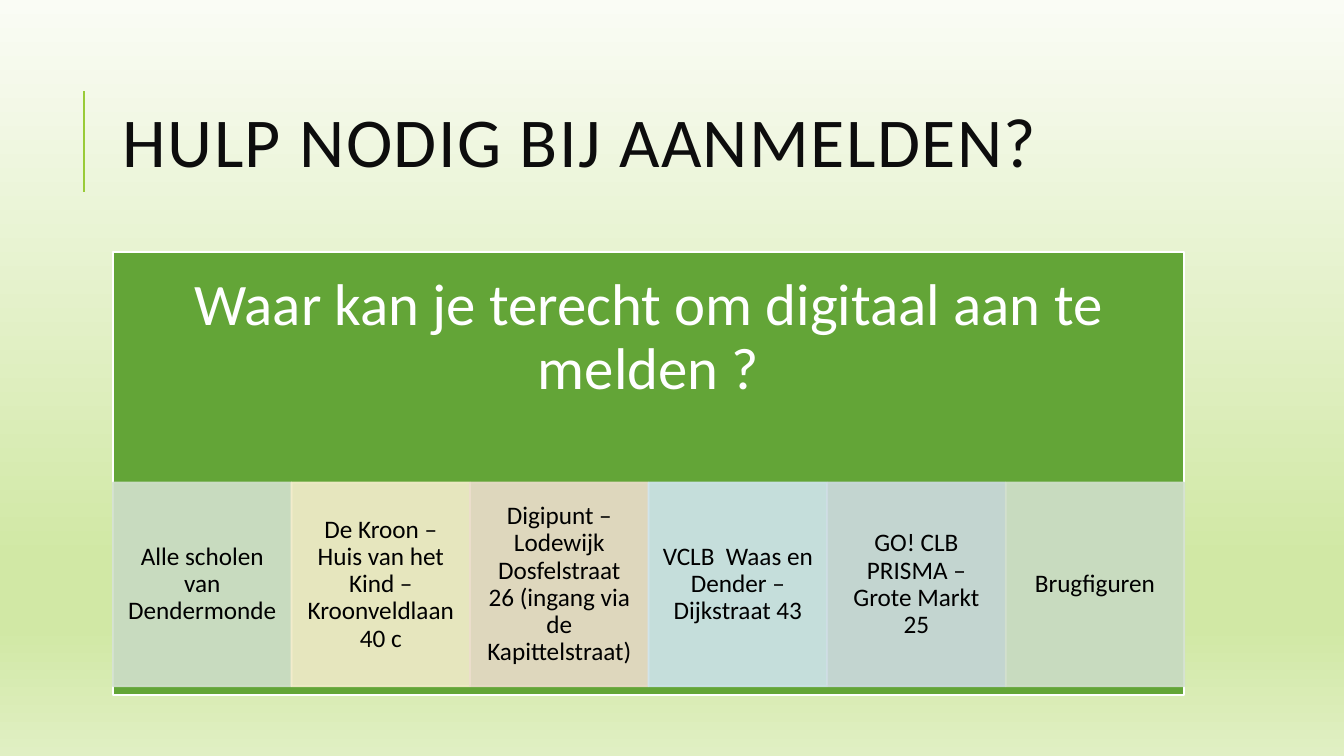
from lxml.etree import SubElement as Sub
from pptx import Presentation
from pptx.dml.color import RGBColor as RGB
from pptx.enum.shapes import MSO_CONNECTOR as Conn, MSO_SHAPE as Form
from pptx.enum.text import MSO_ANCHOR as Anchor, PP_ALIGN as Align
from pptx.oxml.ns import qn
from pptx.util import Pt

TITLE = "HULP NODIG BIJ AANMELDEN?"
HEAD = "Waar kan je terecht om digitaal aan te melden ?"
PLACES = [
    ("Alle scholen van Dendermonde", "D3E1CE"),
    ("De Kroon – Huis van het Kind – Kroonveldlaan 40 c", "F5EECD"),
    ("Digipunt – Lodewijk Dosfelstraat 26 (ingang via de Kapittelstraat)", "ECDDCC"),
    ("VCLB  Waas en Dender – Dijkstraat 43", "D0E5ED"),
    ("GO! CLB PRISMA – Grote Markt 25", "CEDBE1"),
    ("Brugfiguren", "D3E1CE"),
]
STOPS = [(0, "FAFCF5"), (74, "D1E8A5"), (83, "D1E8A5"), (100, "E0EFC3")]
LEFT, WIDTH = 80.7, 765.2
TOP, HIGH = 180, 316.6
ROW, CELL = 344.7, 145.5


def paint(color, hue):
    color.rgb = RGB.from_string(hue)


def fade(shape):
    for node in shape.element.spPr.iter(qn("a:srgbClr")):
        Sub(node, qn("a:alpha"), val="90000")


def add_box(slide, x, y, w, h, fill, edge):
    box = slide.shapes.add_shape(Form.RECTANGLE, Pt(x), Pt(y), Pt(w), Pt(h))
    box.shadow.inherit = False
    box.fill.solid()
    paint(box.fill.fore_color, fill)
    paint(box.line.color, edge)
    box.line.width = Pt(1.25)
    return box


def write(shape, text, size, hue, anchor, pads, align=Align.CENTER, gap=0.9):
    frame = shape.text_frame
    frame.word_wrap = True
    frame.vertical_anchor = anchor
    side, edge = pads
    frame.margin_left = frame.margin_right = Pt(side)
    frame.margin_top = frame.margin_bottom = Pt(edge)
    para = frame.paragraphs[0]
    para.alignment = align
    para.line_spacing = gap
    run = para.add_run()
    run.text = text
    run.font.name = "Calibri"
    run.font.size = Pt(size)
    paint(run.font.color, hue)
    return run


def set_back(slide):
    fill = slide.background.fill
    fill.gradient()
    fill.gradient_angle = 270
    stops = slide.background._cSld.find(".//" + qn("a:gsLst"))
    for node in list(stops):
        stops.remove(node)
    for part, hue in STOPS:
        stop = Sub(stops, qn("a:gs"), pos=str(part * 1000))
        Sub(stop, qn("a:srgbClr"), val=hue)


def main():
    deck = Presentation()
    deck.slide_width, deck.slide_height = Pt(960), Pt(540)
    slide = deck.slides.add_slide(deck.slide_layouts[6])
    set_back(slide)

    rule = slide.shapes.add_connector(Conn.STRAIGHT, Pt(60), Pt(136.8), Pt(60), Pt(64.8))
    paint(rule.line.color, "99CB38")
    rule.line.width = Pt(1.5)
    Sub(rule.element.spPr, qn("a:effectLst"))

    title = slide.shapes.add_textbox(Pt(LEFT), Pt(46), Pt(WIDTH), Pt(118))
    run = write(title, TITLE, 50, "0D0D0D", Anchor.MIDDLE, (7.2, 3.6), Align.LEFT, 0.8)
    run._r.get_or_add_rPr().set("spc", "100")

    panel = add_box(slide, LEFT, TOP, WIDTH, HIGH, "63A537", "FFFFFF")
    write(panel, HEAD, 42, "FFFFFF", Anchor.TOP, (24, 16.5))

    step = WIDTH / len(PLACES)
    for i, (text, hue) in enumerate(PLACES):
        cell = add_box(slide, LEFT + i * step, ROW, step, CELL, hue, hue)
        fade(cell)
        write(cell, text, 18, "000000", Anchor.MIDDLE, (10, 2))

    deck.save("out.pptx")


if __name__ == "__main__":
    main()
